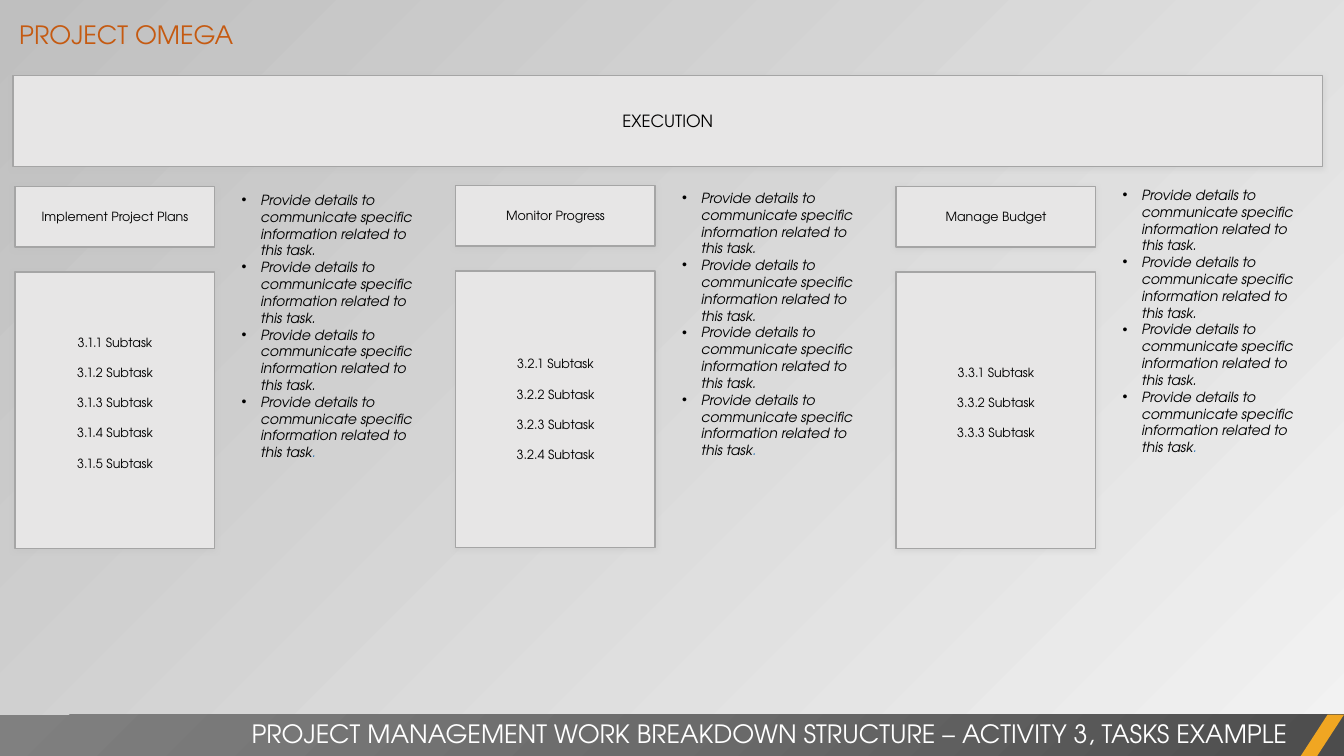
import pptx
import pptx.dml.color
import pptx.enum.shapes
import pptx.enum.text
import pptx.oxml
import pptx.oxml.ns
import pptx.util

COLS, ROWS = 160, 90
FACE = "TeX Gyre Adventor"
HUES = {
    "panel": "E7E6E6", "edge": "A5A5A5", "shade": "BFBFBF", "ink": "000000",
    "light": "F2F2F2", "white": "FFFFFF", "title": "C55A11", "dot": "2E75B6",
    "tab": "F0A622", "dark": "4C4C4C", "mid": "6B6B6B", "pale": "808080",
}
NOTE = "Provide details to communicate specific information related to this task"
NOTES = [NOTE + "."] * 3 + [NOTE]
# name, number of subtasks, row shift of boxes, top row of notes, room below subtasks
TASKS = [
    ("Implement Project Plans", 5, 0, 22.2, 2.4),
    ("Monitor Progress", 4, -0.12, 21.96, 0.6),
    ("Manage Budget", 3, 0, 21.6, 2.4),
]
LEFT, STEP, WIDE = 1.8, 52.44, 23.76

SHAPES = pptx.enum.shapes.MSO_SHAPE
ALIGN = pptx.enum.text.PP_ALIGN
ANCHOR = pptx.enum.text.MSO_ANCHOR
FIT = pptx.enum.text.MSO_AUTO_SIZE


def hue(name):
    return pptx.dml.color.RGBColor.from_string(HUES[name])


def node(text):
    """Parse a drawing element given with the a: prefix."""
    head, mark, rest = text.partition(">")
    if head.endswith("/"):
        head, mark = head[:-1], "/>"
    return pptx.oxml.parse_xml(f"{head} {pptx.oxml.ns.nsdecls('a')}{mark}{rest}")


class Deck:
    """Keeps the style, the grid and the current slide."""

    def __init__(self):
        self.show = pptx.Presentation()
        self.show.slide_width = pptx.util.Inches(13.333)
        self.show.slide_height = pptx.util.Inches(7.5)
        self.slide = self.show.slides.add_slide(self.show.slide_layouts[5])
        self.shapes = self.slide.shapes

    def col(self, count):
        return round(self.show.slide_width * count / COLS)

    def row(self, count):
        return round(self.show.slide_height * count / ROWS)

    def place(self, x, y, w, h):
        return self.col(x), self.row(y), self.col(w), self.row(h)

    def fill(self, frame, lines, size, ink="ink", align=ALIGN.LEFT, gap=0):
        """Fill a text frame, one paragraph a line."""
        frame.word_wrap = True
        for i, line in enumerate(lines):
            para = frame.add_paragraph() if i else frame.paragraphs[0]
            para.add_run().text = line
            para.alignment = align
            para.space_before = pptx.util.Pt(0)
            para.space_after = pptx.util.Pt(gap)
            para.font.size = pptx.util.Pt(size)
            para.font.name = FACE
            para.font.color.rgb = hue(ink)

    def back(self):
        fill = self.slide.background.fill
        fill.gradient()
        fill.gradient_angle = 135
        for stop, name in zip(fill.gradient_stops, ("light", "shade")):
            stop.color.rgb = hue(name)

    def title(self, text, *spot):
        box = self.shapes.title
        box.left, box.top, box.width, box.height = self.place(*spot)
        box.text_frame.vertical_anchor = ANCHOR.TOP
        box.text_frame.auto_size = FIT.NONE
        self.fill(box.text_frame, [text], 18, "title")

    def text(self, lines, size, *spot, **style):
        frame = self.shapes.add_textbox(*self.place(*spot)).text_frame
        self.fill(frame, lines, size, **style)
        frame.auto_size = FIT.SHAPE_TO_FIT_TEXT
        return frame

    def block(self, kind, fill, *spot):
        shape = self.shapes.add_shape(kind, *self.place(*spot))
        shape.shadow.inherit = False
        shape.fill.solid()
        shape.fill.fore_color.rgb = hue(fill)
        shape.line.fill.background()
        return shape

    def panel(self, lines, size, *spot, gap=0, room=0.6):
        """Draw an outlined box with a soft shadow and centred text."""
        shape = self.block(SHAPES.RECTANGLE, "panel", *spot)
        shape.line.color.rgb = hue("edge")
        shape.line.width = pptx.util.Pt(1)
        shape.element.spPr.find(pptx.oxml.ns.qn("a:effectLst")).append(node(
            '<a:outerShdw blurRad="50800" dist="12700" dir="5400000">'
            f'<a:srgbClr val="{HUES["shade"]}"><a:alpha val="40000"/></a:srgbClr>'
            '</a:outerShdw>'))
        frame = shape.text_frame
        frame.vertical_anchor = ANCHOR.MIDDLE
        frame.margin_bottom = self.row(room)
        self.fill(frame, lines, size, align=ALIGN.CENTER, gap=gap)

    def notes(self, *spot):
        frame = self.text(NOTES, 10, *spot)
        hang = self.col(2.25)
        for para in frame.paragraphs:
            para.font.italic = True
            props = para._p.get_or_add_pPr()
            props.set("marL", str(hang))
            props.set("indent", str(-hang))
            base = props.find(pptx.oxml.ns.qn("a:defRPr"))
            base.addprevious(node('<a:buFont typeface="Arial"/>'))
            base.addprevious(node('<a:buChar char="•"/>'))
        dot = para.add_run()
        dot.text = "."
        dot.font.color.rgb = hue("dot")

    def foot(self, text):
        bar = self.block(SHAPES.RECTANGLE, "dark", 0, 85.08, COLS, 5)
        stops = "".join(
            f'<a:gs pos="{i * 50000}"><a:srgbClr val="{HUES[name]}"/></a:gs>'
            for i, name in enumerate(("dark", "mid", "pale")))
        props = bar.element.spPr
        solid = props.find(pptx.oxml.ns.qn("a:solidFill"))
        props.replace(solid, node(
            f'<a:gradFill rotWithShape="1"><a:gsLst>{stops}</a:gsLst>'
            '<a:path path="circle"><a:fillToRect l="100000" t="100000"/></a:path>'
            '</a:gradFill>'))
        tab = self.block(SHAPES.PARALLELOGRAM, "tab", 154.8, 85.08, 5.2, 5)
        tab.adjustments[0] = 0.65
        self.text([text], 18, 0, 84.96, 154.44, 4.8, ink="white", align=ALIGN.RIGHT)


def main():
    deck = Deck()
    deck.back()
    deck.title("PROJECT OMEGA", 1.08, 1.68, 121.32, 4.8)
    deck.panel(["EXECUTION"], 12, 1.56, 9, 155.88, 10.8)
    for i, (name, count, shift, top, room) in enumerate(TASKS):
        x = LEFT + i * STEP
        deck.panel([name], 9, x, 22.2 + shift, WIDE, 7.2)
        subs = [f"3.{i + 1}.{n + 1} Subtask" for n in range(count)]
        deck.panel(subs, 9, x, 32.4 + shift, WIDE, 32.88, gap=10.8, room=room)
        deck.notes(x + 25.8, top, 24.72, 36)
    deck.foot("PROJECT MANAGEMENT WORK BREAKDOWN STRUCTURE – ACTIVITY 3, TASKS EXAMPLE")
    deck.show.save("out.pptx")


if __name__ == "__main__":
    main()
